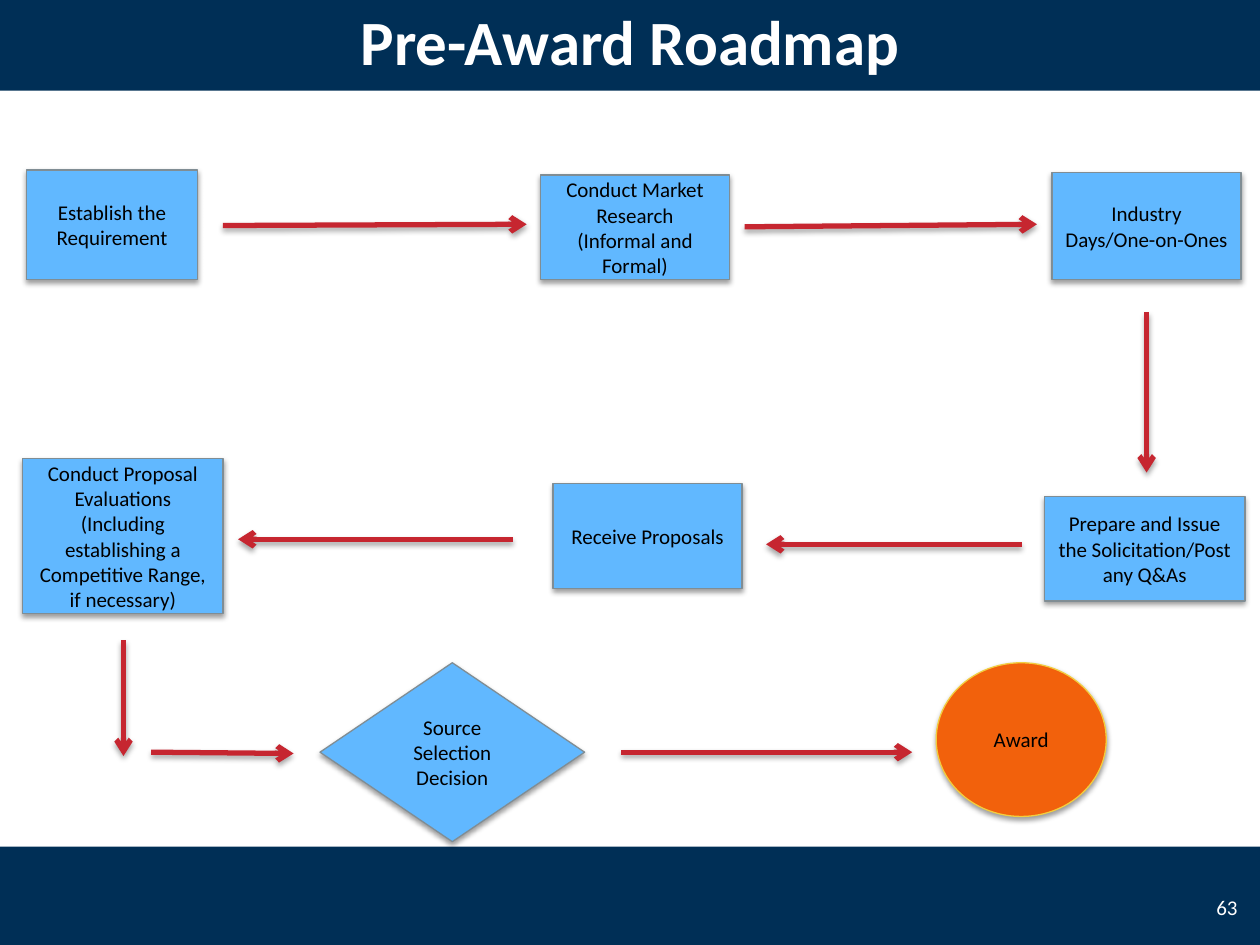
import pptx
import pptx.dml.color
import pptx.enum.shapes
import pptx.enum.text
import pptx.oxml
import pptx.oxml.ns
import pptx.util
from pptx.util import Inches

RGBColor = pptx.dml.color.RGBColor
NAVY = RGBColor(0x00, 0x2F, 0x56)
WHITE = RGBColor(0xFF, 0xFF, 0xFF)
BLACK = RGBColor(0x00, 0x00, 0x00)
BLUE = RGBColor(0x61, 0xB8, 0xFF)
GRAY = RGBColor(0x80, 0x8D, 0x94)
RED = RGBColor(0xC6, 0x26, 0x30)
ORANGE = RGBColor(0xF2, 0x61, 0x0C)
GOLD = RGBColor(0xF2, 0xCD, 0x3F)

SHAPES = pptx.enum.shapes.MSO_SHAPE
ALIGN = pptx.enum.text.PP_ALIGN


def write_text(shape, text, size=12, color=BLACK, bold=False, align=ALIGN.CENTER):
    """Fill the shape with text, one paragraph per line."""
    frame = shape.text_frame
    frame.word_wrap = True
    frame.vertical_anchor = pptx.enum.text.MSO_ANCHOR.MIDDLE
    frame.text = text
    for paragraph in frame.paragraphs:
        paragraph.alignment = align
        font = paragraph.font
        font.name = "Calibri"
        font.size = pptx.util.Pt(size)
        font.bold = bold
        font.color.rgb = color


def add_shadow(shape, opacity, distance):
    """Drop a soft black shadow straight down; opacity in percent, distance in points."""
    shape._element.spPr.append(pptx.oxml.parse_xml(
        f'<a:effectLst {pptx.oxml.ns.nsdecls("a")}>'
        f'<a:outerShdw blurRad="{pptx.util.Pt(3.1)}" dist="{pptx.util.Pt(distance)}" '
        'dir="5400000" rotWithShape="0"><a:srgbClr val="000000">'
        f'<a:alpha val="{opacity * 1000}"/></a:srgbClr></a:outerShdw></a:effectLst>'))


presentation = pptx.Presentation()
presentation.slide_width = Inches(10)
presentation.slide_height = Inches(7.5)
slide = presentation.slides.add_slide(presentation.slide_layouts[6])

# Header and footer bands
for top in (6.72, -0.08):
    band = slide.shapes.add_shape(
        SHAPES.RECTANGLE, Inches(0), Inches(top), Inches(10), Inches(0.8))
    band.fill.solid()
    band.fill.fore_color.rgb = NAVY
    band.line.fill.background()
    band.shadow.inherit = False

page_number = slide.shapes.add_textbox(Inches(9.5), Inches(7), Inches(0.42), Inches(0.4))
write_text(page_number, "63", color=WHITE, align=ALIGN.RIGHT)
title = slide.shapes.add_textbox(Inches(0), Inches(-0.08), Inches(10), Inches(0.8))
write_text(title, "Pre-Award Roadmap", size=36, color=WHITE, bold=True)

# Steps: preset, left, top, width, height, fill, outline, text
PROCESS = SHAPES.FLOWCHART_PROCESS
steps = [
    (PROCESS, 0.21, 1.35, 1.36, 0.87, BLUE, GRAY, "Establish the Requirement"),
    (PROCESS, 4.29, 1.39, 1.5, 0.83, BLUE, GRAY,
     "Conduct Market Research\n(Informal and Formal)"),
    (PROCESS, 8.35, 1.37, 1.5, 0.85, BLUE, GRAY, "Industry Days/One-on-Ones"),
    (PROCESS, 8.29, 3.94, 1.59, 0.83, BLUE, GRAY,
     "Prepare and Issue the Solicitation/Post any Q&As"),
    (PROCESS, 4.39, 3.84, 1.5, 0.83, BLUE, GRAY, "Receive Proposals"),
    (PROCESS, 0.18, 3.64, 1.59, 1.23, BLUE, GRAY,
     "Conduct Proposal Evaluations\n"
     "(Including establishing a Competitive Range, if necessary)"),
    (SHAPES.FLOWCHART_DECISION, 2.54, 5.26, 2.1, 1.42, BLUE, GRAY,
     "Source Selection Decision"),
    (SHAPES.OVAL, 7.43, 5.26, 1.35, 1.22, ORANGE, GOLD, "Award"),
]
for preset, left, top, width, height, fill, outline, text in steps:
    step = slide.shapes.add_shape(
        preset, Inches(left), Inches(top), Inches(width), Inches(height))
    step.fill.solid()
    step.fill.fore_color.rgb = fill
    step.line.color.rgb = outline
    step.line.width = pptx.util.Pt(0.75)
    add_shadow(step, opacity=38, distance=1.6)
    write_text(step, text)

# Arrows: start x, start y, end x, end y
arrows = [
    (1.77, 1.79, 4.18, 1.78),
    (5.91, 1.8, 8.23, 1.78),
    (9.1, 2.48, 9.1, 3.75),
    (8.11, 4.32, 6.08, 4.32),
    (4.07, 4.28, 1.89, 4.28),
    (0.98, 5.08, 0.98, 6),
    (1.2, 5.97, 2.33, 5.98),
    (4.93, 5.97, 7.24, 5.97),
]
for points in arrows:
    arrow = slide.shapes.add_connector(
        pptx.enum.shapes.MSO_CONNECTOR.STRAIGHT, *(Inches(point) for point in points))
    arrow.line.color.rgb = RED
    arrow.line.width = pptx.util.Pt(3)
    arrow.line._get_or_add_ln().append(pptx.oxml.parse_xml(
        f'<a:tailEnd {pptx.oxml.ns.nsdecls("a")} type="arrow"/>'))
    add_shadow(arrow, opacity=35, distance=1.8)

presentation.save("out.pptx")
